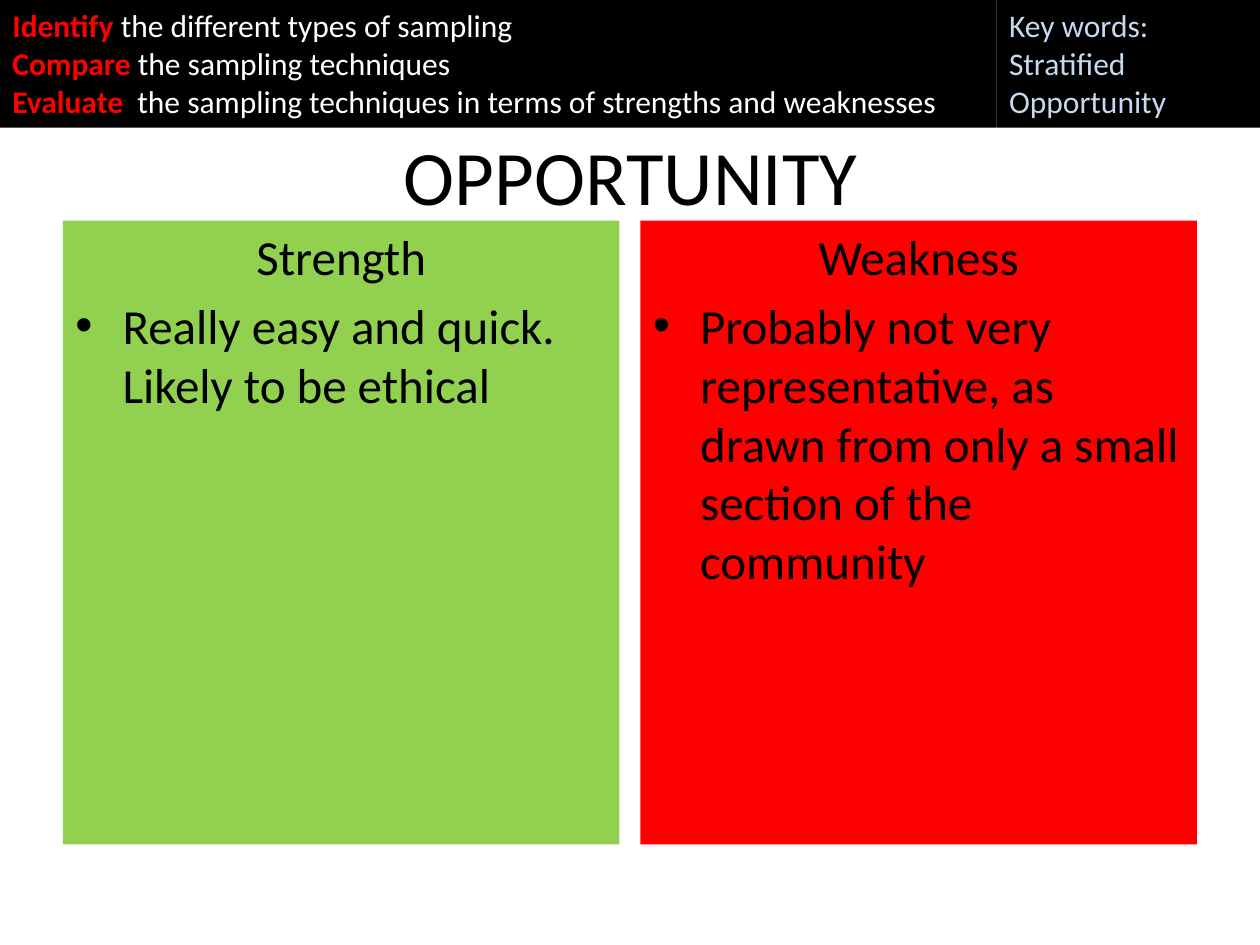
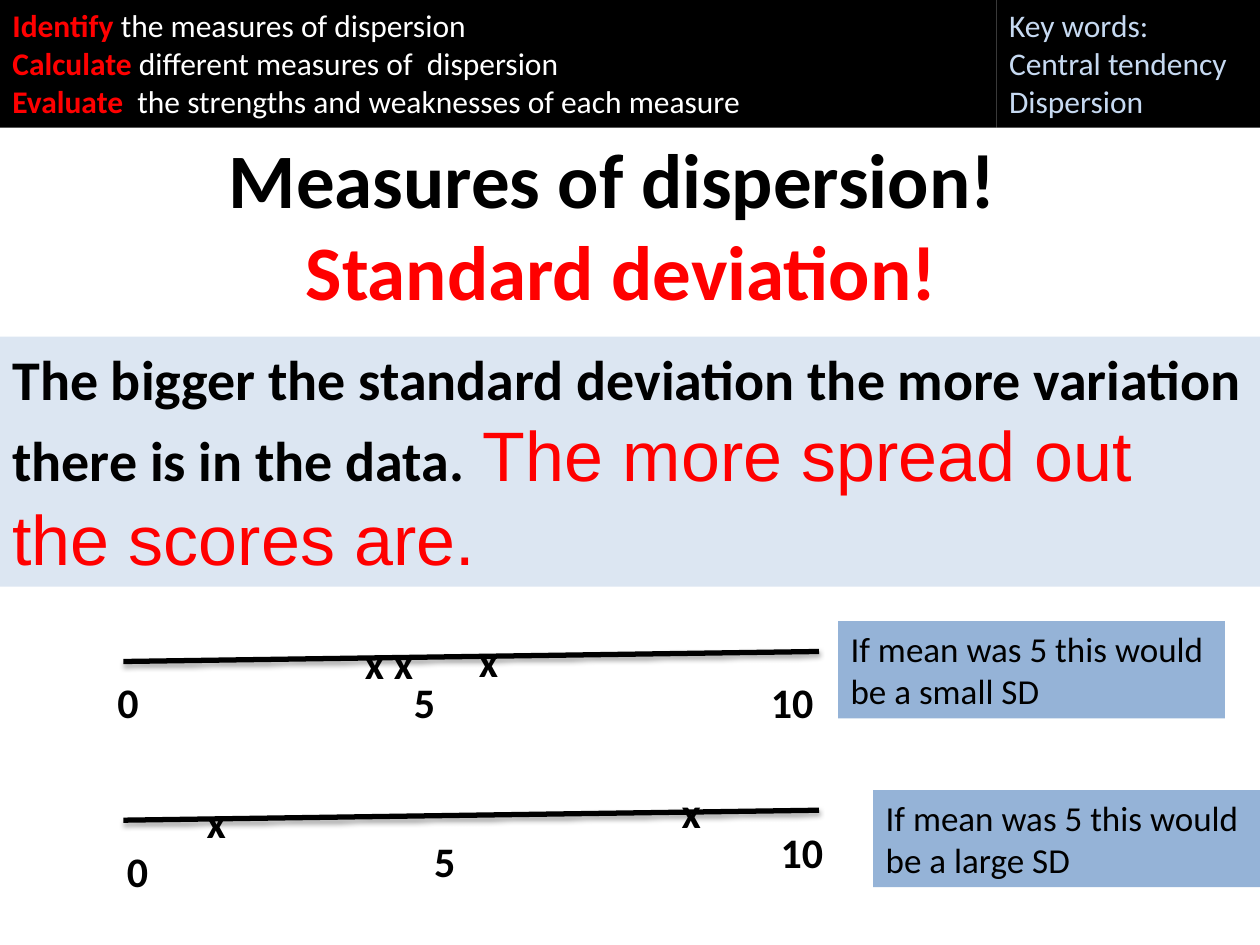
"""Build two lesson slides on opportunity sampling and standard deviation."""
import lxml.etree
import pptx
import pptx.dml.color
import pptx.enum.shapes
import pptx.enum.text
import pptx.oxml
import pptx.oxml.ns
import pptx.util

Pt = pptx.util.Pt
ALIGN = pptx.enum.text.PP_ALIGN
ANCHOR = pptx.enum.text.MSO_ANCHOR
BLACK, WHITE, RED = "000000", "FFFFFF", "FF0000"
GREEN, KEYWORD_BLUE = "92D050", "C6D9F1"
PALE_BLUE, NOTE_BLUE = "DCE6F2", "95B3D7"
FONT = "Calibri"
SLIDE_WIDTH, SLIDE_HEIGHT = 720, 540
BAND_HEIGHT, GOALS_WIDTH = 73, 569.5


def set_color(target, value):
    target.rgb = pptx.dml.color.RGBColor.from_string(value)


def add_text(page, place, paragraphs, fill=None, anchor=ANCHOR.TOP, align=ALIGN.LEFT,
             wrap=True, size=18, color=BLACK, bold=False, font=FONT):
    left, top, width, height = [Pt(length) for length in place]
    if fill:
        box = page.shapes.add_shape(pptx.enum.shapes.MSO_SHAPE.RECTANGLE, left, top, width, height)
        box.shadow.inherit = False
        box.fill.solid()
        set_color(box.fill.fore_color, fill)
        box.line.fill.background()
    else:
        box = page.shapes.add_textbox(left, top, width, height)
    frame = box.text_frame
    frame.word_wrap = wrap
    frame.vertical_anchor = anchor
    for index, spans in enumerate(paragraphs):
        para = frame.add_paragraph() if index else frame.paragraphs[0]
        para.alignment = align
        for text, changes in ([(spans, {})] if isinstance(spans, str) else spans):
            style = {"size": size, "color": color, "bold": bold, "font": font} | changes
            span = para.add_run()
            span.text = text
            span.font.name = style["font"]
            span.font.size = Pt(style["size"])
            span.font.bold = style["bold"]
            set_color(span.font.color, style["color"])
    return box


deck = pptx.Presentation()
deck.slide_width = Pt(SLIDE_WIDTH)
deck.slide_height = Pt(SLIDE_HEIGHT)

lessons = [
    ([("Identify ", "the different types of sampling"),
      ("Compare ", "the sampling techniques"),
      ("Evaluate ", " the sampling techniques in terms of strengths and weaknesses")],
     ["Key words:", "Stratified", "Opportunity"]),
    ([("Identify ", "the measures of dispersion"),
      ("Calculate ", "different measures of  dispersion"),
      ("Evaluate ", " the strengths and weaknesses of each measure")],
     ["Key words:", "Central tendency", "Dispersion"]),
]
pages = []
for goals, keywords in lessons:
    page = deck.slides.add_slide(deck.slide_layouts[6])
    goal_lines = [[(verb, {"color": RED, "bold": True}), (goal, {})] for verb, goal in goals]
    add_text(page, (0, 0, GOALS_WIDTH, BAND_HEIGHT), goal_lines, fill=BLACK, color=WHITE)
    add_text(page, (GOALS_WIDTH, 0, SLIDE_WIDTH - GOALS_WIDTH, BAND_HEIGHT), keywords,
             fill=BLACK, color=KEYWORD_BLUE)
    pages.append(page)
sampling_page, dispersion_page = pages

add_text(sampling_page, (36.5, 55, 648, 90), ["OPPORTUNITY"], size=44,
         align=ALIGN.CENTER, anchor=ANCHOR.MIDDLE)
panels = [
    ("Strength", "Really easy and quick. Likely to be ethical", GREEN),
    ("Weakness", "Probably not very representative, as drawn from only a small "
                 "section of the community", RED),
]
for column, (heading, point, fill) in enumerate(panels):
    panel = add_text(sampling_page, (36 + 330 * column, 126, 318, 356.5), [heading, point],
                     fill=fill, size=28, align=ALIGN.CENTER)
    bullet_para = panel.text_frame.paragraphs[1]
    bullet_para.alignment = ALIGN.LEFT
    bullet_para.space_before = Pt(5.6)
    properties = bullet_para._p.get_or_add_pPr()
    properties.set("marL", str(Pt(27)))
    properties.set("indent", str(-Pt(27)))
    for tag, name, value in [("a:buFont", "typeface", "Arial"), ("a:buChar", "char", "•")]:
        lxml.etree.SubElement(properties, pptx.oxml.ns.qn(tag)).set(name, value)

add_text(dispersion_page, (121.5, 71.5, 467.5, 114),
         ["Measures of dispersion! ", [("Standard deviation!", {"color": RED})]],
         size=44, bold=True, align=ALIGN.CENTER, wrap=False)
add_text(dispersion_page, (0, 192.3, SLIDE_WIDTH, 143),
         [[("The bigger the standard deviation the more variation there is in the data.", {}),
           (" The more spread out the scores are.",
            {"size": 40, "color": RED, "bold": False, "font": "Arial"})]],
         fill=PALE_BLUE, anchor=ANCHOR.MIDDLE, size=32, bold=True)

SHADOW = (
    f'<a:effectLst {pptx.oxml.ns.nsdecls("a")}>'
    f'<a:outerShdw blurRad="{Pt(3.1)}" dist="{Pt(1.8)}" dir="5400000" rotWithShape="0">'
    '<a:srgbClr val="000000"><a:alpha val="35000"/></a:srgbClr>'
    '</a:outerShdw></a:effectLst>'
)
number_lines = [
    (378, [("0", 60, 383), ("5", 229.5, 383), ("10", 433.5, 383),
           ("x", 201.5, 361), ("x", 218, 361), ("x", 266.5, 359.5)],
     "If mean was 5 this would be a small SD", 479, 355),
    (468.7, [("0", 65.5, 479.5), ("5", 241, 474), ("10", 439, 468.7),
             ("x", 111, 451.5), ("x", 382.5, 445.7)],
     "If mean was 5 this would be a large SD", 499, 451.5),
]
for line_top, marks, note, note_left, note_top in number_lines:
    line = dispersion_page.shapes.add_connector(
        pptx.enum.shapes.MSO_CONNECTOR.STRAIGHT,
        Pt(70.5), Pt(line_top), Pt(468), Pt(line_top - 5.7))
    line.line.width = Pt(3)
    set_color(line.line.color, BLACK)
    line._element.spPr.append(pptx.oxml.parse_xml(SHADOW))
    for mark, left, top in marks:
        add_text(dispersion_page, (left, top, 45, 36), [mark], size=24, bold=True)
    add_text(dispersion_page, (note_left, note_top, 221, 55.5), [note], fill=NOTE_BLUE, size=20)

deck.save("out.pptx")
